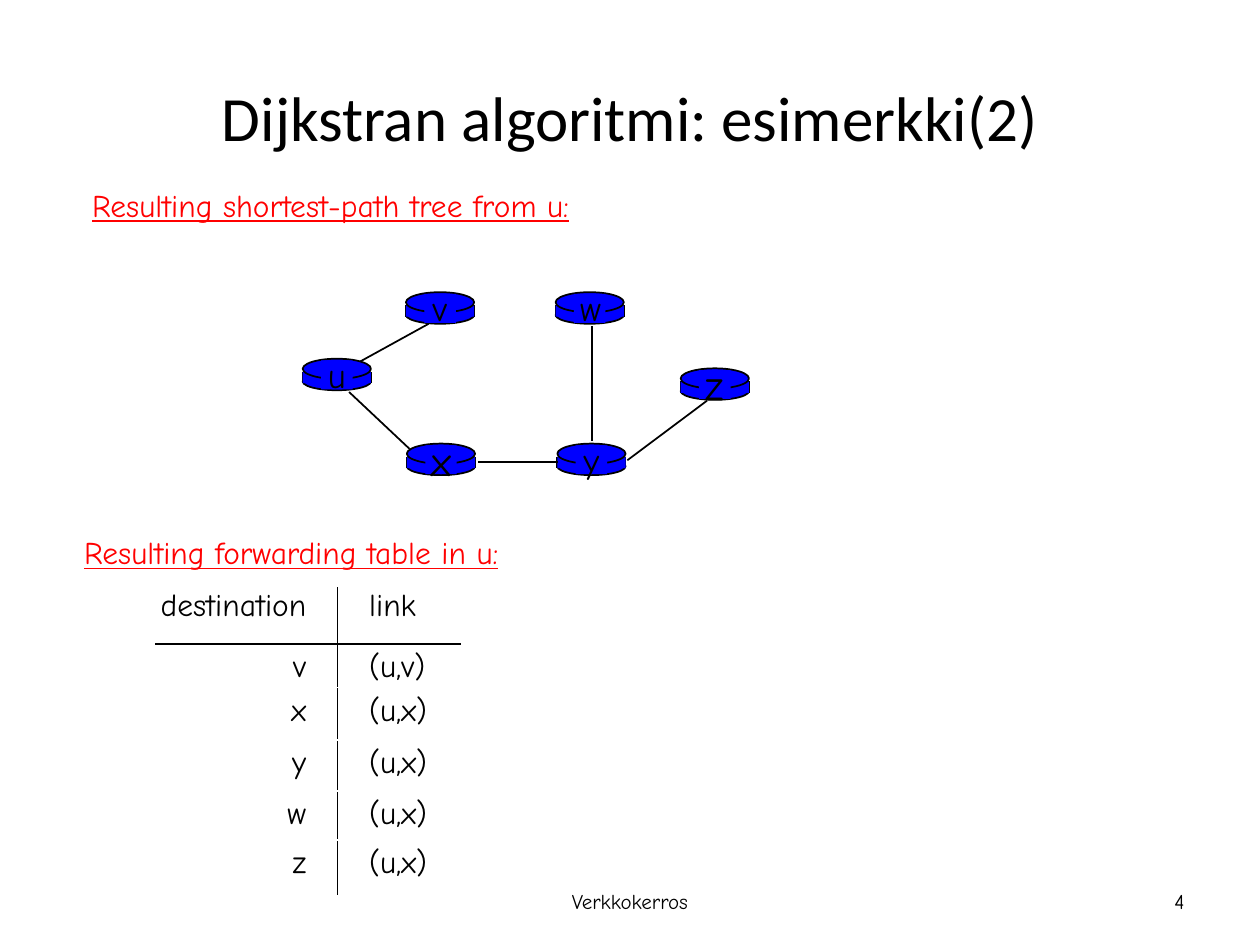
from lxml import etree
from pptx import Presentation
from pptx import util as u
from pptx.dml.color import RGBColor
from pptx.enum import shapes, text
from pptx.oxml import ns

Pt = u.Pt
BLACK = RGBColor(0, 0, 0)
BLUE = RGBColor(0, 0, 255)
RED = RGBColor(255, 0, 0)
HAND = "Comic Neue"
LEFT, CENTER, RIGHT = text.PP_ALIGN.LEFT, text.PP_ALIGN.CENTER, text.PP_ALIGN.RIGHT

ROUTERS = {
    "u": (173, 205, 20),
    "x": (232.5, 253.5, 24),
    "v": (232, 167, 20),
    "w": (317.5, 167, 20),
    "y": (318.5, 253.5, 20),
    "z": (389, 210.5, 24),
}
LINKS = [
    (206, 206.5, 245, 185),
    (338.5, 186.5, 338.5, 252),
    (358.5, 263, 404, 229),
    (319, 264, 273, 264),
    (234, 256.5, 199.5, 224),
]
FORWARDING = [
    ("destination", "link"),
    ("v", "(u,v)"),
    ("x", "(u,x)"),
    ("y", "(u,x)"),
    ("w", "(u,x)"),
    ("z", "(u,x)"),
]
ROW_HEIGHTS = [32, 25, 30, 29, 28, 32]
COLUMN_WIDTHS = [104, 70]


def style_paragraph(p, size, color=BLACK, name=HAND, align=LEFT):
    p.alignment = align
    p.font.size = Pt(size)
    p.font.name = name
    p.font.color.rgb = color


def add_text(s, words, x, y, w, h, size, wrap=True, underline=False, **style):
    sp = s.shapes.add_textbox(Pt(x), Pt(y), Pt(w), Pt(h))
    tf = sp.text_frame
    tf.word_wrap = wrap
    tf.vertical_anchor = text.MSO_ANCHOR.MIDDLE
    p = tf.paragraphs[0]
    p.text = words
    style_paragraph(p, size, **style)
    if underline:
        p.font.underline = True


def add_blue(s, kind, x, y, w, h, outlined=False):
    sp = s.shapes.add_shape(kind, Pt(x), Pt(y), Pt(w), Pt(h))
    sp.shadow.inherit = False
    sp.fill.solid()
    sp.fill.fore_color.rgb = BLUE
    if outlined:
        sp.line.color.rgb = BLACK
        sp.line.width = Pt(1)
    else:
        sp.line.fill.background()


def add_line(s, x1, y1, x2, y2):
    c = s.shapes.add_connector(shapes.MSO_CONNECTOR.STRAIGHT, Pt(x1), Pt(y1), Pt(x2), Pt(y2))
    c.line.color.rgb = BLACK
    c.line.width = Pt(1)
    etree.SubElement(c._element.spPr, ns.qn("a:effectLst"))


def add_router(s, x, y):
    oval, rect = shapes.MSO_SHAPE.OVAL, shapes.MSO_SHAPE.RECTANGLE
    add_blue(s, oval, x, y + 8, 39, 10, outlined=True)
    for side in (x, x + 39):
        add_line(s, side, y + 7.5, side, y + 14)
    add_blue(s, rect, x, y + 7.5, 39, 6.5)
    add_blue(s, oval, x, y, 39, 11.5, outlined=True)


def add_router_label(s, name, x, y, size):
    add_blue(s, shapes.MSO_SHAPE.RECTANGLE, x + 10.5, y + 1, 18, 16.5)
    add_text(s, name, x + 7, y - 6.5, 25, 31, size, wrap=False, align=CENTER)


def add_border(cell, side):
    ln = etree.SubElement(cell._tc.get_or_add_tcPr(), ns.qn("a:" + side), w=str(Pt(0.75)))
    fill = etree.SubElement(ln, ns.qn("a:solidFill"))
    etree.SubElement(fill, ns.qn("a:srgbClr"), val=str(BLACK))


def add_forwarding_table(s, x, y):
    frame = s.shapes.add_table(len(FORWARDING), 2, Pt(x), Pt(y),
                               Pt(sum(COLUMN_WIDTHS)), Pt(sum(ROW_HEIGHTS)))
    table = frame.table
    table.first_row = table.horz_banding = False
    for column, width in zip(table.columns, COLUMN_WIDTHS):
        column.width = Pt(width)
    for i, (row, words) in enumerate(zip(table.rows, FORWARDING)):
        row.height = Pt(ROW_HEIGHTS[i])
        for j, cell in enumerate(row.cells):
            add_border(cell, "lnL" if j else "lnR")
            if i < 2:
                add_border(cell, "lnT" if i else "lnB")
            cell.fill.background()
            cell.margin_left = Pt(18 if j else 0)
            cell.margin_right = Pt(0 if j else 18)
            cell.margin_top = Pt(3 if i else 0)
            cell.margin_bottom = 0
            p = cell.text_frame.paragraphs[0]
            p.text = words[j]
            style_paragraph(p, 18, align=LEFT if j else RIGHT)


def main():
    prs = Presentation()
    prs.slide_width, prs.slide_height = Pt(720), Pt(540)
    s = prs.slides.add_slide(prs.slide_layouts[6])
    add_text(s, "Verkkokerros", 246, 500.5, 228, 29, 12, align=CENTER)
    add_text(s, "4", 516, 500.5, 168, 29, 12, align=RIGHT)
    add_text(s, "Dijkstran algoritmi: esimerkki(2)", 36, 21.5, 648, 90, 36,
             name="Calibri", align=CENTER)
    for x, y, size in ROUTERS.values():
        add_router(s, x, y)
    for link in LINKS:
        add_line(s, *link)
    for name, place in ROUTERS.items():
        add_router_label(s, name, *place)
    add_text(s, "Resulting shortest-path tree from u:", 45.5, 102.5, 323, 29, 18,
             wrap=False, underline=True, color=RED)
    add_text(s, "Resulting forwarding table in u:", 41, 301, 276.5, 29, 18,
             wrap=False, underline=True, color=RED)
    add_forwarding_table(s, 89, 336)
    prs.save("out.pptx")


if __name__ == "__main__":
    main()
